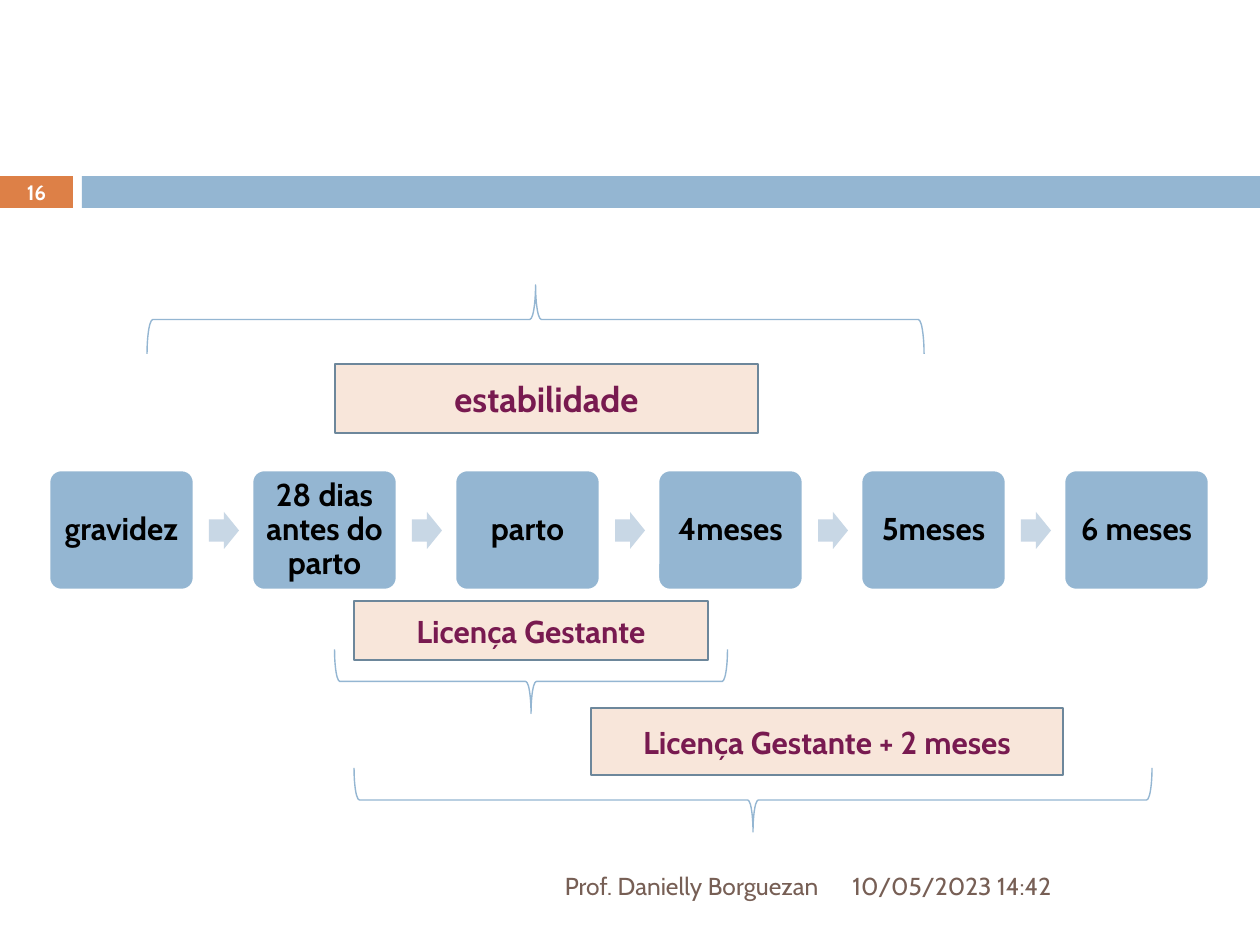
"""Build the maternity leave timeline slide."""
from pptx import Presentation
from pptx.util import Pt
from pptx.dml.color import RGBColor
from pptx.enum import shapes, text

PX = 914400 / 126
FONT = "Cabin"
COLORS = {
    "blue": "94B6D2", "pale_blue": "C8D7E5", "orange": "DD8047",
    "peach": "F8E6DA", "slate": "6D879B", "plum": "781A50",
    "brown": "775F55", "white": "FFFFFF", "black": "000000",
}
KIND = shapes.MSO_SHAPE
ALIGN = text.PP_ALIGN


def add_shape(kind, box, fill=None, line=None, line_width=1.5):
    shape = slide.shapes.add_shape(kind, *[round(value * PX) for value in box])
    shape.shadow.inherit = False
    if fill:
        shape.fill.solid()
        shape.fill.fore_color.rgb = RGBColor.from_string(COLORS[fill])
    else:
        shape.fill.background()
    if line:
        shape.line.color.rgb = RGBColor.from_string(COLORS[line])
        shape.line.width = Pt(line_width)
    else:
        shape.line.fill.background()
    return shape


def write(shape, words, size, color, bold=True, align=ALIGN.CENTER):
    frame = shape.text_frame
    frame.word_wrap = True
    frame.vertical_anchor = text.MSO_ANCHOR.MIDDLE
    paragraph = frame.paragraphs[0]
    paragraph.text = words
    paragraph.alignment = align
    paragraph.font.name = FONT
    paragraph.font.size = Pt(size)
    paragraph.font.bold = bold
    paragraph.font.color.rgb = RGBColor.from_string(COLORS[color])
    return paragraph


presentation = Presentation()
presentation.slide_width = round(1260 * PX)
presentation.slide_height = round(945 * PX)
slide = presentation.slides.add_slide(presentation.slide_layouts[6])

number = add_shape(KIND.RECTANGLE, (0, 176, 73, 32), "orange")
write(number, "16", 11.9, "white")
add_shape(KIND.RECTANGLE, (82, 176, 1178, 32), "blue")

steps = ["gravidez", "28 dias antes do parto", "parto", "4meses", "5meses", "6 meses"]
for index, label in enumerate(steps):
    left = 49 + 203 * index
    step = add_shape(KIND.ROUNDED_RECTANGLE, (left, 470, 145, 120), "blue", "white")
    step.adjustments[0] = 0.1
    frame = step.text_frame
    frame.margin_left = frame.margin_right = round(9 * PX)
    frame.margin_top = frame.margin_bottom = round(9 * PX)
    write(step, label, 18, "black").line_spacing = 0.9
    if index < len(steps) - 1:
        arrow = add_shape(KIND.RIGHT_ARROW, (left + 160, 512, 30, 37), "pale_blue")
        arrow.adjustments[0] = 0.6

footers = [
    ("10/05/2023 14:42", (840, 861, 368, 50), ALIGN.LEFT),
    ("Prof. Danielly Borguezan", (84, 861, 747, 50), ALIGN.RIGHT),
]
for words, box, align in footers:
    footer = slide.shapes.add_textbox(*[round(value * PX) for value in box])
    write(footer, words, 14, "brown", False, align)

periods = [
    ("estabilidade", 20, (335, 364, 423, 69), KIND.LEFT_BRACE, (501, -69, 69, 777)),
    ("Licença Gestante", 18, (354, 601, 354, 59), KIND.RIGHT_BRACE, (499, 485, 64, 393)),
    ("Licença Gestante + 2 meses", 18, (591, 708, 472, 67), KIND.RIGHT_BRACE, (721, 401, 64, 798)),
]
for words, size, box, brace_kind, brace_box in periods:
    brace = add_shape(brace_kind, brace_box, line="blue", line_width=0.79)
    brace.rotation = 90
    period = add_shape(KIND.RECTANGLE, box, "peach", "slate")
    write(period, words, size, "plum")

presentation.save("out.pptx")
